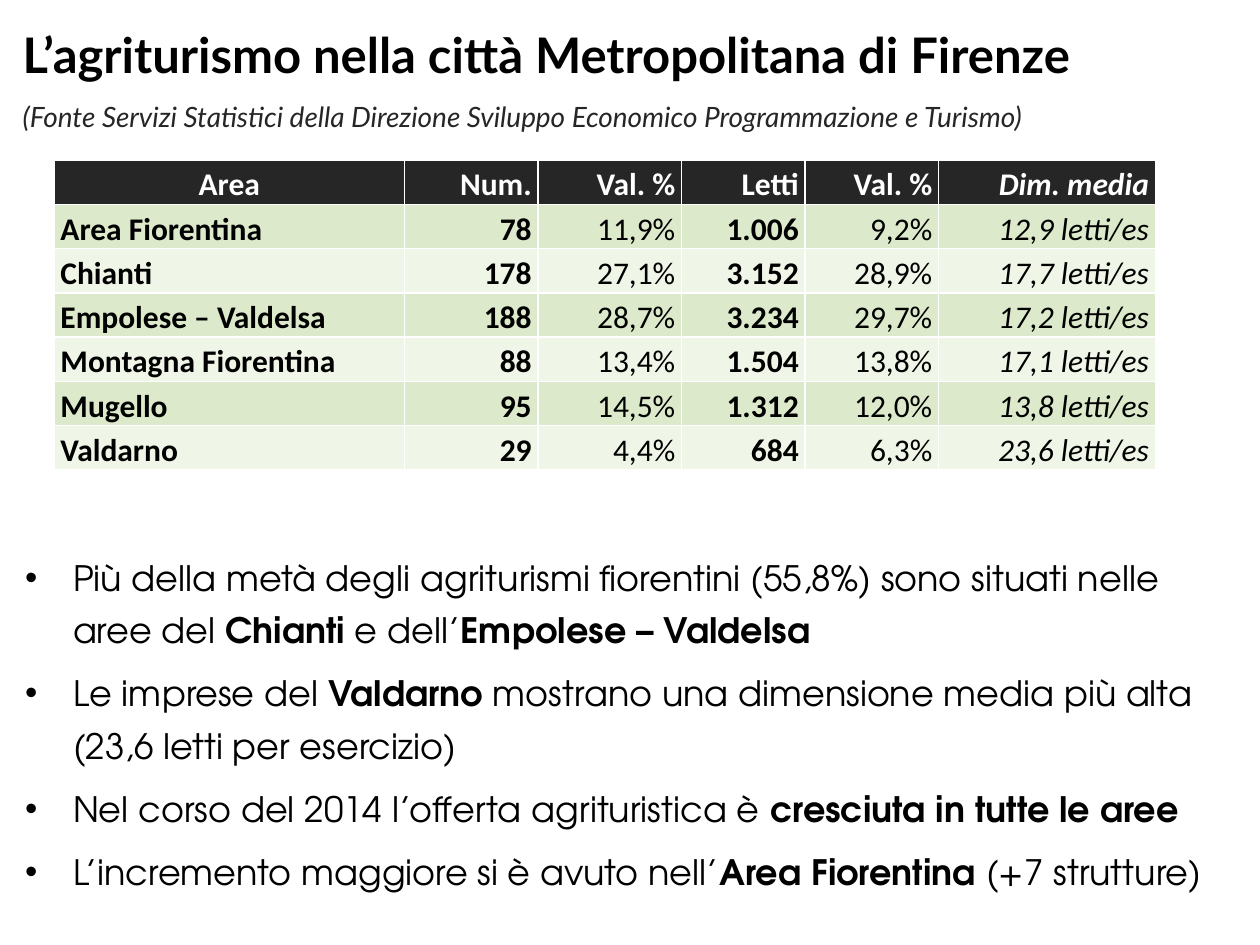
from pptx import Presentation
from pptx import util as u
from pptx.dml.color import RGBColor
from pptx.enum import text

BLACK = RGBColor(0x00, 0x00, 0x00)
WHITE = RGBColor(0xFF, 0xFF, 0xFF)
DARK = RGBColor(0x26, 0x26, 0x26)
GREEN = RGBColor(0xDC, 0xEA, 0xCB)
PALE = RGBColor(0xEF, 0xF5, 0xE7)

WIDTHS = [2.78, 1.06, 1.14, 0.98, 1.06, 1.72]
BOLD_COLS = (0, 1, 3)
ROWS = [
    ["Area", "Num.", "Val. %", "Letti", "Val. %", "Dim. media"],
    ["Area Fiorentina", "78", "11,9%", "1.006", "9,2%", "12,9 letti/es"],
    ["Chianti", "178", "27,1%", "3.152", "28,9%", "17,7 letti/es"],
    ["Empolese – Valdelsa", "188", "28,7%", "3.234", "29,7%", "17,2 letti/es"],
    ["Montagna Fiorentina", "88", "13,4%", "1.504", "13,8%", "17,1 letti/es"],
    ["Mugello", "95", "14,5%", "1.312", "12,0%", "13,8 letti/es"],
    ["Valdarno", "29", "4,4%", "684", "6,3%", "23,6 letti/es"],
]
# Runs alternate between plain and bold.
POINTS = [
    ["Più della metà degli agriturismi fiorentini (55,8%) sono situati nelle aree del ",
     "Chianti", " e dell’", "Empolese – Valdelsa"],
    ["Le imprese del ", "Valdarno",
     " mostrano una dimensione media più alta (23,6 letti per esercizio)"],
    ["Nel corso del 2014 l’offerta agrituristica è ", "cresciuta in tutte le aree"],
    ["L’incremento maggiore si è avuto nell’", "Area Fiorentina ", "(+7 strutture)"],
]


class Deck:
    """Holds the fonts and the current slide."""
    head_font = "Lato"
    cell_font = "Calibri"
    list_font = "TeX Gyre Adventor"

    def __init__(self, prs):
        self.slide = prs.slides.add_slide(prs.slide_layouts[1])

    def place(self, shape, left, top, width, height):
        """Moves a placeholder and returns its emptied text frame."""
        shape.left, shape.top = u.Inches(left), u.Inches(top)
        shape.width, shape.height = u.Inches(width), u.Inches(height)
        frame = shape.text_frame
        frame.word_wrap = True
        frame.auto_size = text.MSO_AUTO_SIZE.NONE
        frame.vertical_anchor = text.MSO_ANCHOR.TOP
        return frame

    def lines(self, frame, count):
        """Yields the paragraphs of a frame, adding those it lacks."""
        for num in range(count):
            para = frame.add_paragraph() if num else frame.paragraphs[0]
            para.alignment = text.PP_ALIGN.LEFT
            para.space_before = u.Pt(0)
            yield para

    def run(self, para, words, font, size, color, bold=False, italic=False):
        run = para.add_run()
        run.text = words
        run.font.name, run.font.size = font, u.Pt(size)
        run.font.bold, run.font.italic = bold, italic
        run.font.color.rgb = color

    def title(self, head, source):
        frame = self.place(self.slide.shapes.title, 0.08, -0.09, 9.8, 1.1)
        first, second = self.lines(frame, 2)
        first.line_spacing = second.line_spacing = 1.5
        self.run(first, head, self.head_font, 28, BLACK, bold=True)
        self.run(second, source, self.head_font, 16, DARK, italic=True)

    def table(self, rows):
        size = [u.Inches(n) for n in (0.43, 1.27, sum(WIDTHS), 0.34 * len(rows))]
        table = self.slide.shapes.add_table(len(rows), len(WIDTHS), *size).table
        for col, width in zip(table.columns, WIDTHS):
            col.width = u.Inches(width)
        for row, words in enumerate(rows):
            for col, word in enumerate(words):
                self.cell(table.cell(row, col), row, col, word)

    def cell(self, cell, row, col, word):
        head = row == 0
        cell.fill.solid()
        cell.fill.fore_color.rgb = DARK if head else GREEN if row % 2 else PALE
        cell.margin_left = cell.margin_right = u.Inches(0.05)
        cell.margin_top = cell.margin_bottom = 0
        cell.vertical_anchor = text.MSO_ANCHOR.MIDDLE
        para = cell.text_frame.paragraphs[0]
        para.line_spacing = 1.15
        if col:
            para.alignment = text.PP_ALIGN.RIGHT
        else:
            para.alignment = text.PP_ALIGN.CENTER if head else text.PP_ALIGN.LEFT
        self.run(para, word, self.cell_font, 18, WHITE if head else BLACK,
                 bold=head or col in BOLD_COLS, italic=col == len(WIDTHS) - 1)

    def bullets(self, points):
        frame = self.place(self.slide.placeholders[1], 0.1, 4.28, 9.69, 2.88)
        for para, runs in zip(self.lines(frame, len(points)), points):
            para.line_spacing, para.space_after = u.Pt(30), u.Pt(6)
            props = para._p.get_or_add_pPr()
            props.set("marL", str(u.Inches(0.38)))
            props.set("indent", str(-u.Inches(0.38)))
            for num, words in enumerate(runs):
                self.run(para, words, self.list_font, 20, BLACK, bold=num % 2 == 1)


def main():
    prs = Presentation()
    prs.slide_width, prs.slide_height = u.Inches(10), u.Inches(7.5)
    deck = Deck(prs)
    deck.title("L’agriturismo nella città Metropolitana di Firenze",
               "(Fonte Servizi Statistici della Direzione Sviluppo Economico "
               "Programmazione e Turismo)")
    deck.table(ROWS)
    deck.bullets(POINTS)
    prs.save("out.pptx")


if __name__ == "__main__":
    main()
